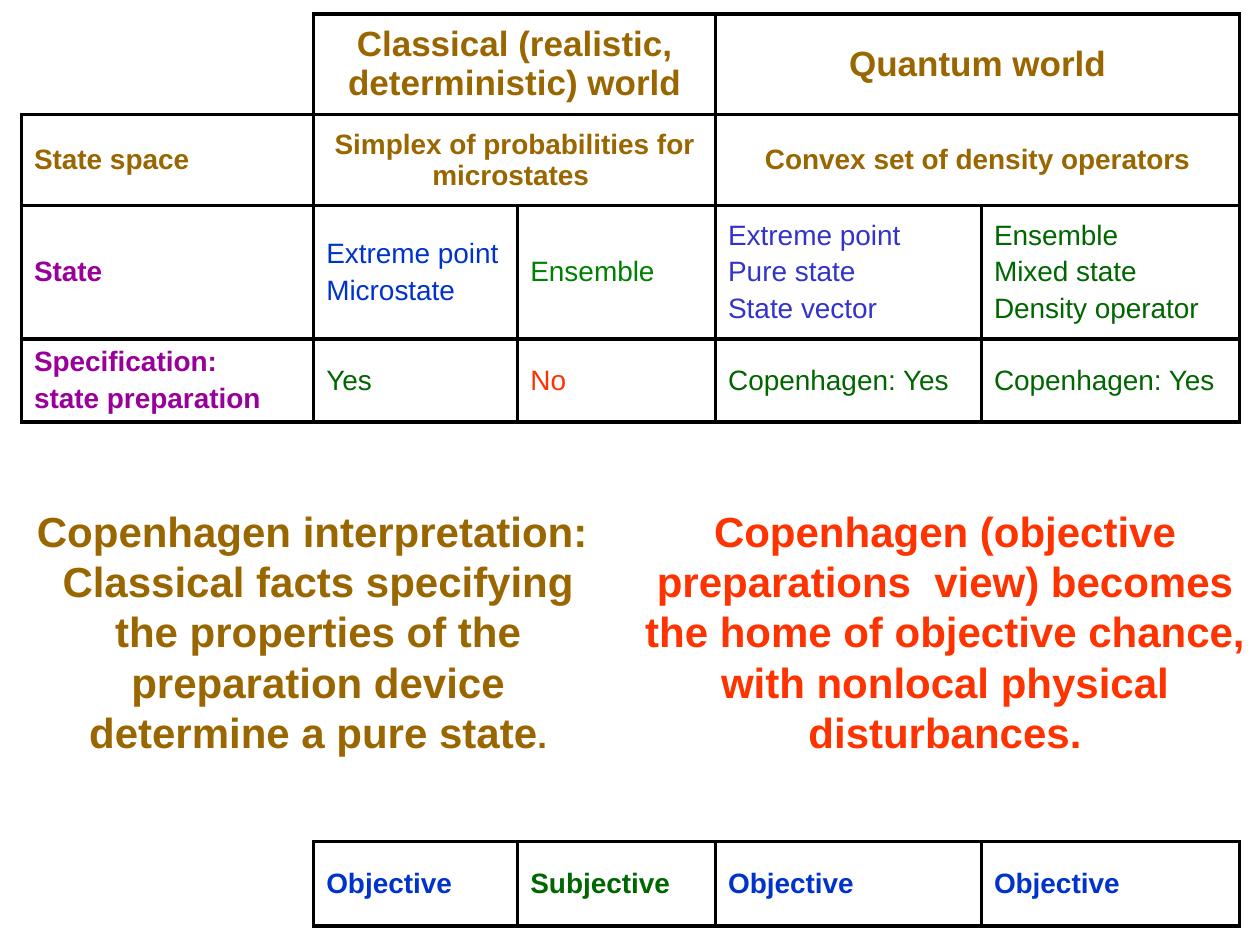
from lxml import etree
from pptx import Presentation
from pptx.dml.color import RGBColor
from pptx.enum import text
from pptx.oxml.ns import qn
from pptx.util import Inches, Pt

BROWN = RGBColor(0x99, 0x66, 0x00)
PURPLE = RGBColor(0x99, 0x00, 0x99)
BLUE = RGBColor(0x00, 0x33, 0xCC)
INDIGO = RGBColor(0x33, 0x33, 0xCC)
LEAF = RGBColor(0x00, 0x80, 0x00)
GREEN = RGBColor(0x00, 0x66, 0x00)
RED = RGBColor(0xFF, 0x33, 0x00)
FONT = "Arial"
MID = text.PP_ALIGN.CENTER

# Cell: lines, colour, size, bold, columns spanned; None is an empty corner
COLS = [2.32, 1.62, 1.57, 2.11, 2.05]
WORLDS = [
    [None,
     (["Classical (realistic, deterministic) world"], BROWN, 20, True, 2),
     (["Quantum world"], BROWN, 20, True, 2)],
    [(["State space"], BROWN, 16, True, 1),
     (["Simplex of probabilities for microstates "], BROWN, 16, True, 2),
     (["Convex set of density operators"], BROWN, 16, True, 2)],
    [(["State"], PURPLE, 16, True, 1),
     (["Extreme point", "Microstate"], BLUE, 16, False, 1),
     (["Ensemble"], LEAF, 16, False, 1),
     (["Extreme point", "Pure state", "State vector"], INDIGO, 16, False, 1),
     (["Ensemble", "Mixed state", "Density operator"], GREEN, 16, False, 1)],
    [(["Specification:", "state preparation"], PURPLE, 16, True, 1),
     (["Yes"], GREEN, 16, False, 1),
     (["No"], RED, 16, False, 1),
     (["Copenhagen: Yes"], GREEN, 16, False, 1),
     (["Copenhagen: Yes"], GREEN, 16, False, 1)],
]
VERDICT = [
    [None,
     (["Objective"], BLUE, 16, True, 1),
     (["Subjective"], GREEN, 16, True, 1),
     (["Objective"], BLUE, 16, True, 1),
     (["Objective"], BLUE, 16, True, 1)],
]
# Table: top, row heights, rows, edges drawn on the empty corner
TABLES = [
    (0.11, [0.8, 0.72, 1.06, 0.66], WORLDS, "RB"),
    (6.68, [0.67], VERDICT, "R"),
]
# Note: left, width, colour, paragraphs of (words, size) runs
NOTES = [
    (0.16, 4.73, BROWN, [
        [("Copenhagen interpretation:  ", 24)],
        [("Classical facts specifying the properties of the preparation "
          "device determine a pure state", 24), (".", 20)]]),
    (4.84, 5.32, RED, [
        [("Copenhagen (objective preparations  view) becomes the home of "
          "objective chance, with nonlocal physical disturbances.", 24)]]),
]


def add_run(para, words, size, color, bold):
    run = para.add_run()
    run.text = words
    font = run.font
    font.name, font.size, font.bold = FONT, Pt(size), bold
    font.color.rgb = color


def set_edges(cell, drawn):
    """Rule the named sides in black and clear the others."""
    cell.fill.background()
    props = cell._tc.get_or_add_tcPr()
    for spot, side in enumerate("LRTB"):
        line = etree.Element(qn("a:ln" + side), w=str(Pt(2.25)))
        if side in drawn:
            fill = etree.SubElement(line, qn("a:solidFill"))
            etree.SubElement(fill, qn("a:srgbClr"), val="000000")
        else:
            etree.SubElement(line, qn("a:noFill"))
        props.insert(spot, line)


def fill_cell(cell, lines, color, size, bold, span):
    cell.vertical_anchor = text.MSO_ANCHOR.MIDDLE
    frame = cell.text_frame
    for i, words in enumerate(lines):
        para = frame.add_paragraph() if i else frame.paragraphs[0]
        para.space_before = Pt(0.2 * size)
        if span > 1:
            para.alignment = MID
        add_run(para, words, size, color, bold)


def add_grid(slide, top, heights, rows, corner):
    grid = slide.shapes.add_table(
        len(rows), len(COLS), Inches(0.17), Inches(top),
        Inches(sum(COLS)), Inches(sum(heights))).table
    grid.first_row = grid.horz_banding = False
    for col, wide in zip(grid.columns, COLS):
        col.width = Inches(wide)
    for r, (high, row) in enumerate(zip(heights, rows)):
        grid.rows[r].height = Inches(high)
        c = 0
        for item in row:
            cell = grid.cell(r, c)
            span = item[-1] if item else 1
            set_edges(cell, "LRTB" if item else corner)
            if item:
                fill_cell(cell, *item)
            if span > 1:
                last = grid.cell(r, c + span - 1)
                set_edges(last, "RTB")
                cell.merge(last)
            c += span


def add_note(slide, left, wide, color, paras):
    box = slide.shapes.add_textbox(
        Inches(left), Inches(3.96), Inches(wide), Inches(2.12))
    frame = box.text_frame
    frame.word_wrap = True
    frame.auto_size = text.MSO_AUTO_SIZE.SHAPE_TO_FIT_TEXT
    for i, runs in enumerate(paras):
        para = frame.add_paragraph() if i else frame.paragraphs[0]
        para.alignment = MID
        for words, size in runs:
            add_run(para, words, size, color, True)


def main():
    deck = Presentation()
    deck.slide_width, deck.slide_height = Inches(10), Inches(7.5)
    slide = deck.slides.add_slide(deck.slide_layouts[6])
    for spec in TABLES:
        add_grid(slide, *spec)
    for note in NOTES:
        add_note(slide, *note)
    deck.save("out.pptx")


if __name__ == "__main__":
    main()
